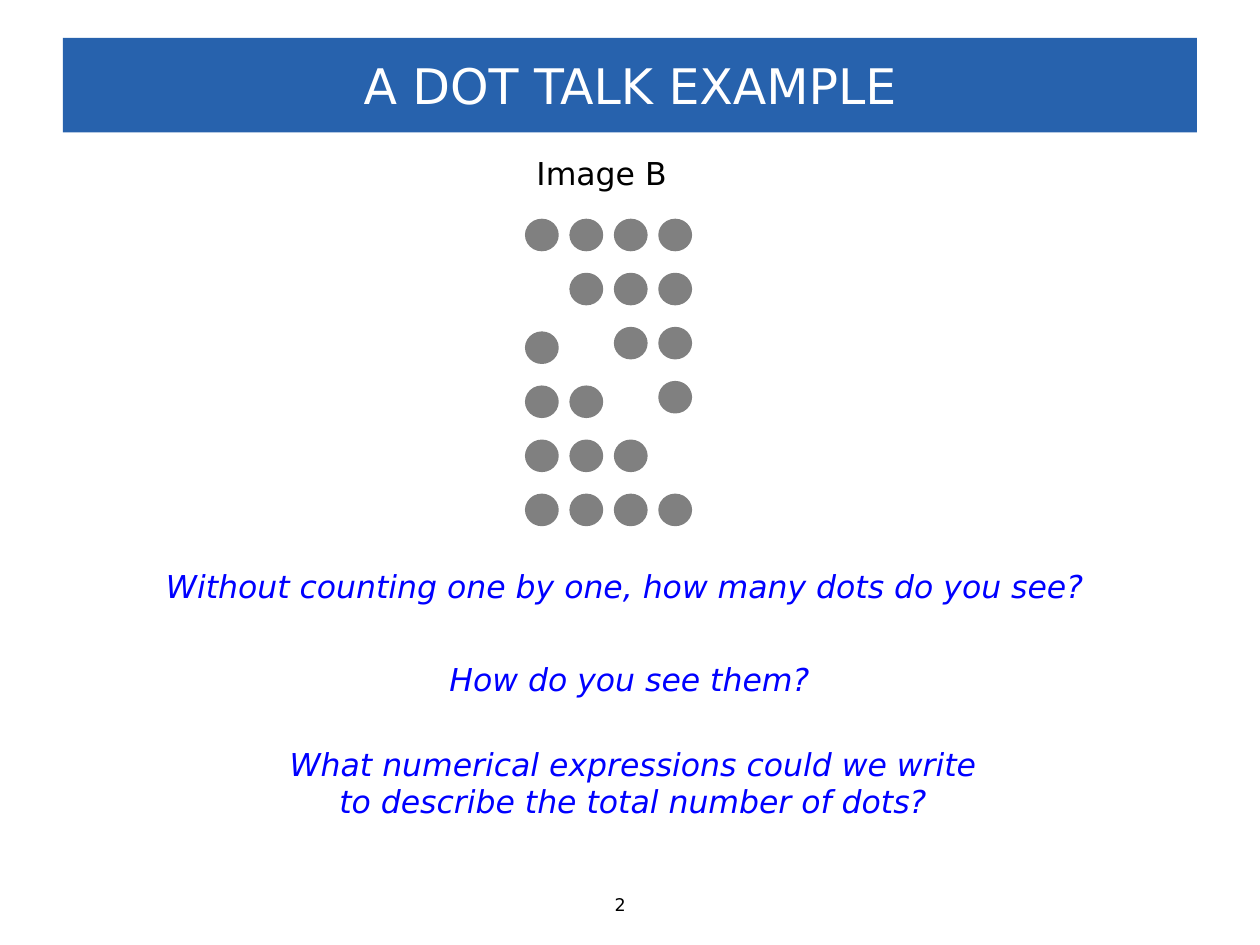
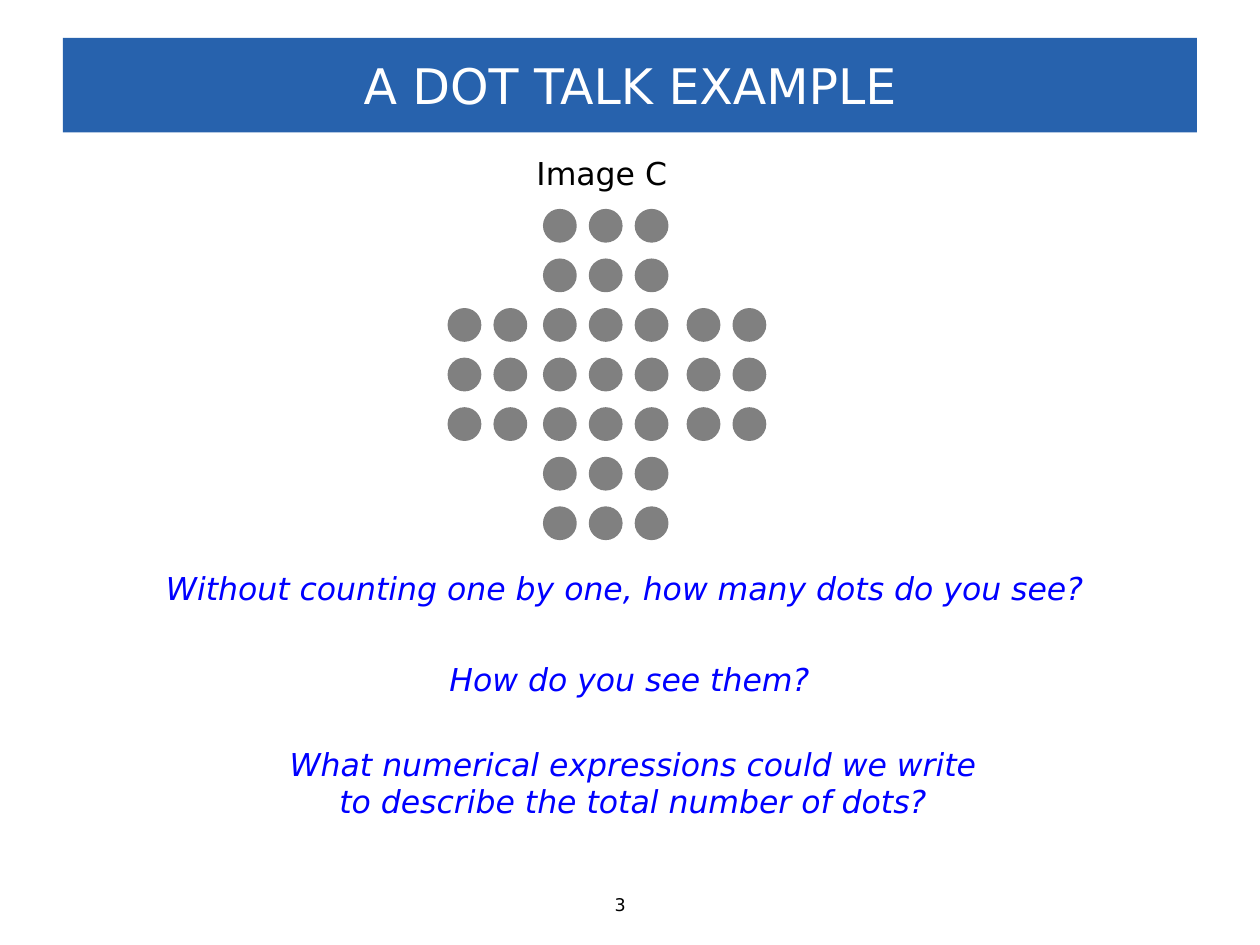
from pptx import Presentation
from pptx.dml.color import RGBColor
from pptx.enum import shapes, text
from pptx.util import Pt

BLUE_BAND = RGBColor(0x27, 0x62, 0xAD)
QUESTION_BLUE = RGBColor(0x00, 0x00, 0xFF)
DOT_GRAY = RGBColor(0x80, 0x80, 0x80)
BLACK = RGBColor(0x00, 0x00, 0x00)
WHITE = RGBColor(0xFF, 0xFF, 0xFF)
FONT = "DejaVu Sans"

# Font formats
TITLE = {"size": Pt(28)}
LABEL = {"size": Pt(18)}
QUESTION = {"size": Pt(18), "italic": True}
NUMBER = {"size": Pt(10)}


class DotTalk:
    """Holds the deck, its style and the current page."""

    def __init__(self):
        self.deck = Presentation()
        self.deck.slide_width, self.deck.slide_height = Pt(720), Pt(540)
        self.page = None

    def add_words(self, frame, words, font_format, color, align):
        para = frame.paragraphs[0]
        para.alignment = align
        span = para.add_run()
        span.text = words
        span.font.name = FONT
        span.font.color.rgb = color
        for name, value in font_format.items():
            setattr(span.font, name, value)

    def title_band(self, words):
        band = self.page.shapes.add_shape(
            shapes.MSO_SHAPE.RECTANGLE, Pt(36), Pt(21.6), Pt(648), Pt(54))
        band.shadow.inherit = False
        band.fill.solid()
        band.fill.fore_color.rgb = BLUE_BAND
        band.line.fill.background()
        band.text_frame.vertical_anchor = text.MSO_ANCHOR.MIDDLE
        self.add_words(band.text_frame, words, TITLE, WHITE, text.PP_ALIGN.CENTER)

    def text_box(self, words, place, font_format, color=BLACK, wrap=False):
        box = self.page.shapes.add_textbox(*map(Pt, place))
        box.text_frame.word_wrap = wrap
        box.text_frame.auto_size = text.MSO_AUTO_SIZE.SHAPE_TO_FIT_TEXT
        align = text.PP_ALIGN.CENTER if wrap else text.PP_ALIGN.LEFT
        self.add_words(box.text_frame, words, font_format, color, align)

    def dots(self, pattern, start, pitch, size):
        """Draw one dot for each "o" in the rows of the pattern."""
        group = self.page.shapes.add_group_shape()
        for row, marks in enumerate(pattern):
            for column, mark in enumerate(marks):
                if mark != "o":
                    continue
                dot = group.shapes.add_shape(
                    shapes.MSO_SHAPE.OVAL,
                    Pt(start[0] + column * pitch[0]),
                    Pt(start[1] + row * pitch[1]), *map(Pt, size))
                dot.shadow.inherit = False
                dot.fill.solid()
                dot.fill.fore_color.rgb = DOT_GRAY
                dot.line.color.rgb = DOT_GRAY
                dot.line.width = Pt(2)

    def new_page(self, number, label, first_question_top):
        """Add a page with everything the dot talks share."""
        self.page = self.deck.slides.add_slide(self.deck.slide_layouts[6])
        self.text_box(number, (344.2, 507.6, 31.7, 19.4), NUMBER)
        self.title_band("A DOT TALK EXAMPLE")
        self.text_box("Without counting one by one, how many dots do you see?",
                      (87.8, first_question_top, 548, 29), QUESTION, QUESTION_BLUE)
        self.text_box("How do you see them?",
                      (249.8, 373.7, 224, 29), QUESTION, QUESTION_BLUE)
        self.text_box("What numerical expressions could we write "
                      "to describe the total number of dots?",
                      (149.8, 421.9, 424, 51), QUESTION, QUESTION_BLUE, wrap=True)
        self.text_box(label, (299.5, 84.2, 91.4, 29), LABEL)


def main():
    talk = DotTalk()

    # Image B: two interlocking staircases
    talk.new_page("2", "Image B", 320.4)
    stairs_pitch, stairs_dot = (25.4, 30.9), (17.3, 16.6)
    talk.dots(("oooo", " ooo", "  oo", "   o"),
              (301, 126), stairs_pitch, stairs_dot)
    talk.dots(("o", "oo", "ooo", "oooo"),
              (301, 190.4), stairs_pitch, stairs_dot)

    # Image C: a cross made of a column and two wings
    talk.new_page("3", "Image C", 321.8)
    cross_pitch, cross_dot, cross_top = (26.2, 28.33), (17.3, 17.3), 120.4
    wing_top = cross_top + 2 * cross_pitch[1]
    talk.dots(("ooo",) * 7, (311.3, cross_top), cross_pitch, cross_dot)
    for wing_left in (256.8, 393.4):
        talk.dots(("oo",) * 3, (wing_left, wing_top), cross_pitch, cross_dot)

    talk.deck.save("out.pptx")


if __name__ == "__main__":
    main()
